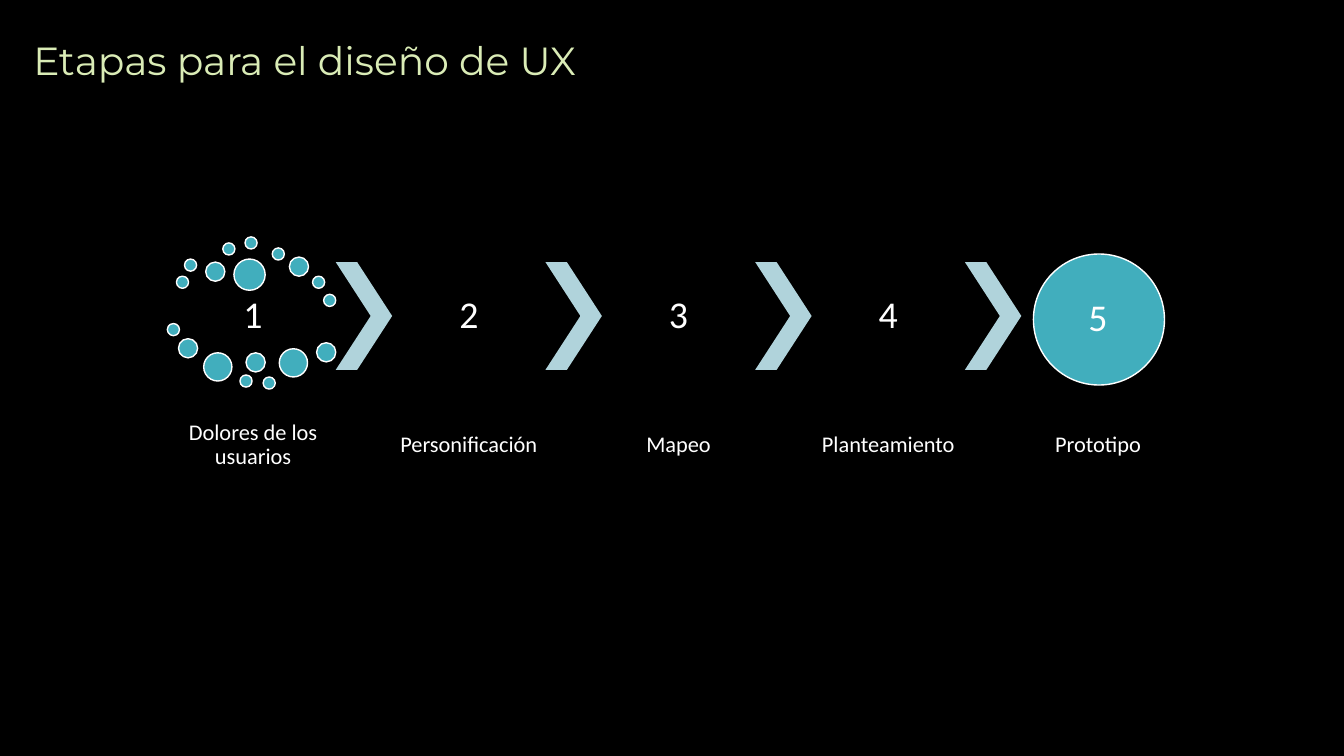
from pptx import Presentation
from pptx.dml.color import RGBColor
from pptx.enum.shapes import MSO_SHAPE
from pptx.enum.text import MSO_ANCHOR, MSO_AUTO_SIZE, PP_ALIGN
from pptx.util import Inches, Pt

COLORS = {
    "back": "000000",
    "title": "DAECB6",
    "text": "FFFFFF",
    "bubble": "41AEBD",
    "arrow": "B0D3DB",
}
STAGES = ["Dolores de los usuarios", "Personificación", "Mapeo", "Planteamiento", "Prototipo"]
BUBBLES = [
    (1.75, 2.74, 0.12), (1.83, 2.57, 0.12), (2.04, 2.6, 0.19),
    (2.21, 2.41, 0.12), (2.43, 2.35, 0.12), (2.7, 2.46, 0.12),
    (2.87, 2.55, 0.19), (3.1, 2.74, 0.12), (3.21, 2.92, 0.12),
    (2.32, 2.57, 0.31), (1.66, 3.21, 0.12), (1.77, 3.36, 0.19),
    (2.02, 3.5, 0.28), (2.38, 3.72, 0.12), (2.44, 3.5, 0.19),
    (2.61, 3.74, 0.12), (2.77, 3.46, 0.28), (3.14, 3.4, 0.19),
    (10.25, 2.52, 1.3),
]
WIDTH = 1.52
STEP = 2.08


def color(name):
    return RGBColor.from_string(COLORS[name])


def write(text, box, size, inset=0.0, font="Calibri", fill="text",
          align=PP_ALIGN.CENTER, anchor=MSO_ANCHOR.MIDDLE, spacing=0.9):
    frame = box.text_frame
    frame.text = text
    frame.word_wrap = True
    frame.vertical_anchor = anchor
    frame.margin_left = frame.margin_right = Inches(inset)
    frame.margin_top = frame.margin_bottom = Inches(min(inset, 0.05))
    line = frame.paragraphs[0]
    line.alignment = align
    line.line_spacing = spacing
    line.font.name = font
    line.font.size = Pt(size)
    line.font.color.rgb = color(fill)


deck = Presentation()
deck.slide_width = Inches(13.33)
deck.slide_height = Inches(7.5)
slide = deck.slides.add_slide(deck.slide_layouts[5])
slide.background.fill.solid()
slide.background.fill.fore_color.rgb = color("back")

title = slide.shapes.title
title.left, title.top = Inches(0.23), Inches(0.31)
title.width, title.height = Inches(5.84), Inches(0.57)
write("Etapas para el diseño de UX", title, 28, inset=0.1, font="Montserrat",
      fill="title", align=PP_ALIGN.LEFT, anchor=MSO_ANCHOR.TOP, spacing=1.0)
title.text_frame.auto_size = MSO_AUTO_SIZE.SHAPE_TO_FIT_TEXT

group = slide.shapes.add_group_shape().shapes

for left, top, size in BUBBLES:
    bubble = group.add_shape(MSO_SHAPE.OVAL, Inches(left), Inches(top), Inches(size), Inches(size))
    bubble.shadow.inherit = False
    bubble.fill.solid()
    bubble.fill.fore_color.rgb = color("bubble")
    bubble.line.color.rgb = color("text")
    bubble.line.width = Pt(1)

for step in range(len(STAGES) - 1):
    arrow = group.add_shape(MSO_SHAPE.CHEVRON, Inches(3.33 + step * STEP), Inches(2.6),
                            Inches(0.56), Inches(1.07))
    arrow.adjustments[0] = 0.62
    arrow.shadow.inherit = False
    arrow.fill.solid()
    arrow.fill.fore_color.rgb = color("arrow")
    arrow.line.fill.background()

for step, stage in enumerate(STAGES):
    left = 3.89 + (step - 1) * STEP if step else 1.75
    top, height = (2.89, 0.5) if step == 0 else (2.6, 1.07)
    if step == len(STAGES) - 1:
        top, height = 2.71, 0.92
    digit = group.add_textbox(Inches(left), Inches(top), Inches(WIDTH), Inches(height))
    write(str(step + 1), digit, 27, inset=0.04)
    label = group.add_textbox(Inches(left), Inches(3.95), Inches(WIDTH), Inches(0.94))
    write(stage, label, 16, inset=0.02)

deck.save("out.pptx")
